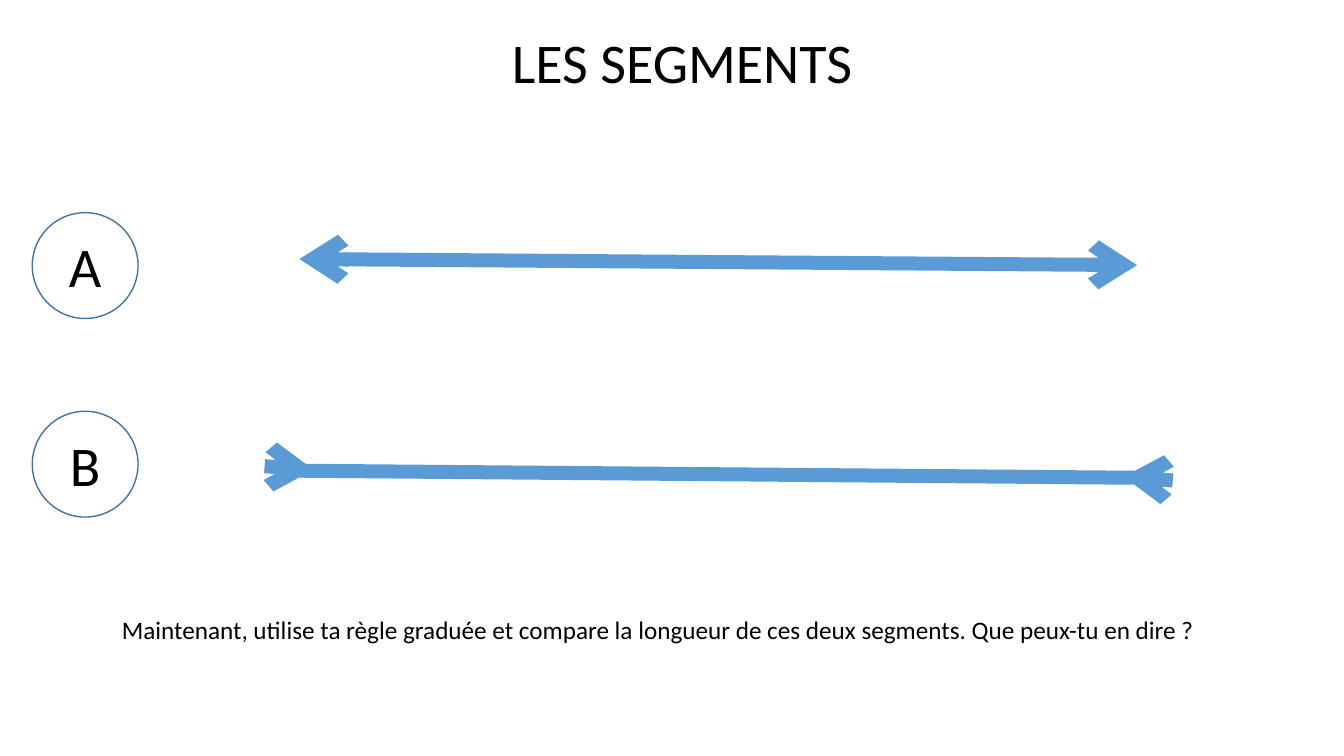
import pptx
import pptx.dml.color
import pptx.enum.shapes
import pptx.enum.text
import pptx.oxml.ns
import pptx.util
import lxml.etree

COLORS = {"segment": "5B9BD5", "ring": "43739E", "text": "000000"}
COLUMNS, ROWS = 40, 30

deck = pptx.Presentation()
deck.slide_width = pptx.util.Inches(13.33)
deck.slide_height = pptx.util.Inches(7.5)
slide = deck.slides.add_slide(deck.slide_layouts[6])


def cells(left, top, width, height):
    """Turn columns and rows of the slide grid into lengths."""
    column, row = deck.slide_width / COLUMNS, deck.slide_height / ROWS
    return [round(n * unit) for n, unit in zip((left, top, width, height), (column, row) * 2)]


def write(shape, text, size=40, align="CENTER", anchor="TOP"):
    frame = shape.text_frame
    frame.word_wrap = True
    frame.vertical_anchor = pptx.enum.text.MSO_ANCHOR[anchor]
    para = frame.paragraphs[0]
    para.alignment = pptx.enum.text.PP_ALIGN[align]
    span = para.add_run()
    span.text = text
    span.font.name = "Calibri"
    span.font.size = pptx.util.Pt(size)
    span.font.color.rgb = pptx.dml.color.RGBColor.from_string(COLORS["text"])


# Segments: start and end in grid cells, then the ends with an arrowhead
left_end, right_end = 8.91, 33.84
segments = [
    (left_end, 10.28, right_end, 10.52, ["headEnd", "tailEnd"]),
    (left_end, 18.68, right_end, 18.96, []),
    (33.45, 18.92, right_end, 18.96, ["headEnd"]),
    (left_end, 18.6, 9.33, 18.64, ["tailEnd"]),
]
for *ends, arrowheads in segments:
    segment = slide.shapes.add_connector(pptx.enum.shapes.MSO_CONNECTOR.STRAIGHT, *cells(*ends))
    segment.line.width = pptx.util.Pt(10)
    segment.line.color.rgb = pptx.dml.color.RGBColor.from_string(COLORS["segment"])
    properties = segment.element.spPr
    outline = properties.find(pptx.oxml.ns.qn("a:ln"))
    for arrowhead in arrowheads:
        lxml.etree.SubElement(outline, pptx.oxml.ns.qn("a:" + arrowhead), type="arrow")
    lxml.etree.SubElement(properties, pptx.oxml.ns.qn("a:effectLst"))

# Instruction
instruction = slide.shapes.add_textbox(*cells(3.33, 24.2, 33.24, 1.6))
write(
    instruction,
    "Maintenant, utilise ta règle graduée et compare la longueur de ces deux segments. Que peux-tu en dire ?",
    size=18,
    align="LEFT",
)

# Round labels
for letter, top in (("A", 8.44), ("B", 16.32)):
    ring = slide.shapes.add_shape(pptx.enum.shapes.MSO_SHAPE.OVAL, *cells(0.96, top, 3.15, 4.2))
    ring.shadow.inherit = False
    ring.fill.background()
    ring.line.width = pptx.util.Pt(1)
    ring.line.color.rgb = pptx.dml.color.RGBColor.from_string(COLORS["ring"])
    write(ring, letter, anchor="MIDDLE")

# Title
title = slide.shapes.add_textbox(*cells(11.67, 0.88, 17.25, 3.08))
write(title, "LES SEGMENTS")

deck.save("out.pptx")
